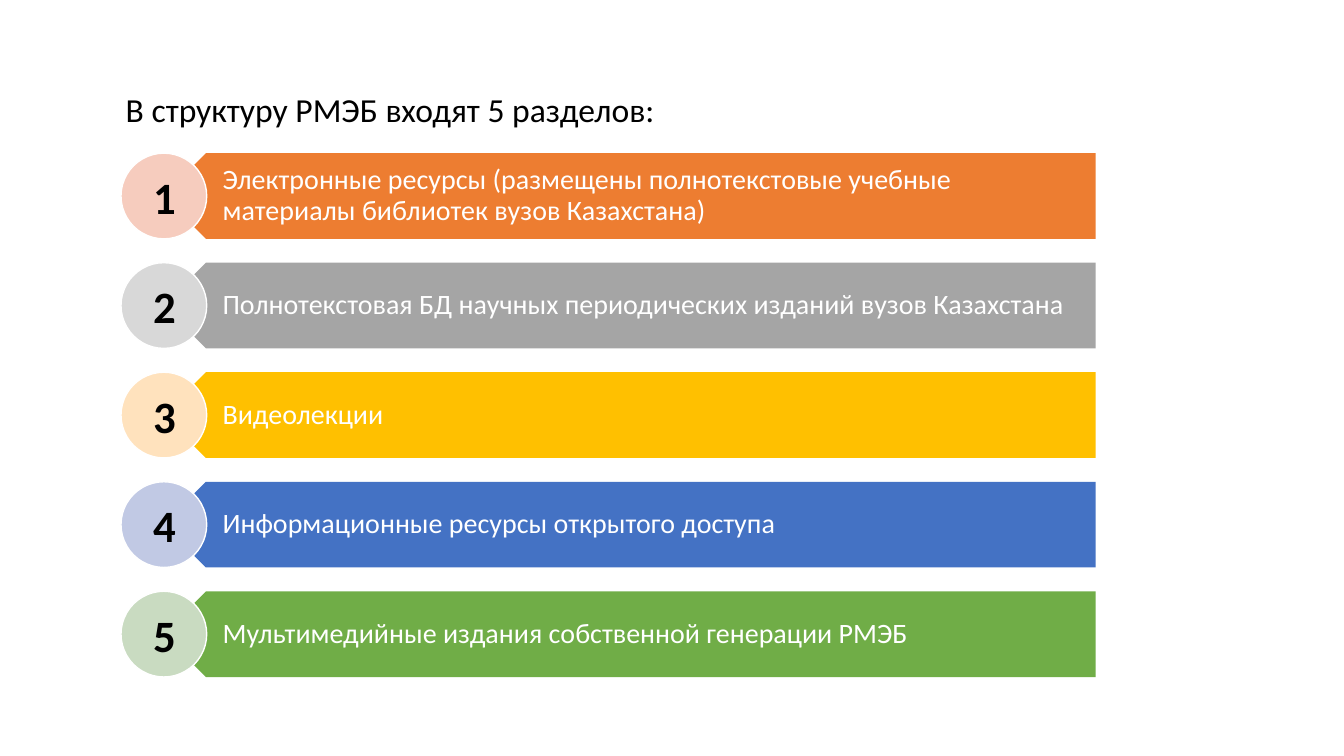
"""Build the slide listing the five sections of the RMEB library."""
import pptx
import pptx.dml.color
import pptx.enum.shapes
import pptx.enum.text
import pptx.util

Cm = pptx.util.Cm
Pt = pptx.util.Pt
Shape = pptx.enum.shapes.MSO_SHAPE
Align = pptx.enum.text.PP_ALIGN


def color(hex_value):
    return pptx.dml.color.RGBColor.from_string(hex_value)


def add_text(left, top, width, height, text, size, font_color):
    box = slide.shapes.add_textbox(Cm(left), Cm(top), Cm(width), Cm(height))
    box.text_frame.word_wrap = True
    paragraph = box.text_frame.paragraphs[0]
    paragraph.text = text
    font = paragraph.runs[0].font
    font.name = "Calibri"
    font.size = Pt(size)
    font.color.rgb = color(font_color)
    return box.text_frame, paragraph


presentation = pptx.Presentation()
presentation.slide_width = Cm(33.87)
presentation.slide_height = Cm(19.05)
slide = presentation.slides.add_slide(presentation.slide_layouts[6])

title_frame, title = add_text(
    2.92, 2.11, 26.44, 1.27, "В структуру РМЭБ входят 5 разделов:", 24, "000000")
title.space_after = Pt(18)

sections = [
    ("Электронные ресурсы (размещены полнотекстовые учебные материалы библиотек вузов Казахстана)",
     "ED7D31", "F6CCBE"),
    ("Полнотекстовая БД научных периодических изданий вузов Казахстана", "A5A5A5", "D8D8D8"),
    ("Видеолекции", "FFC000", "FFE2BD"),
    ("Информационные ресурсы открытого доступа", "4472C4", "C1C9E4"),
    ("Мультимедийные издания собственной генерации РМЭБ", "70AD47", "C9DBC1"),
]
first_top = 3.86
row_step = 2.76
row_height = 2.16

for index, (label, banner_color, circle_color) in enumerate(sections):
    top = first_top + index * row_step

    banner = slide.shapes.add_shape(
        Shape.PENTAGON, Cm(4.11), Cm(top), Cm(23.5), Cm(row_height))
    banner.rotation = 180
    banner.shadow.inherit = False
    banner.fill.solid()
    banner.fill.fore_color.rgb = color(banner_color)
    banner.line.fill.background()

    label_frame, label_paragraph = add_text(
        4.67, top, 22.96, row_height, label, 20, "FFFFFF")
    label_frame.vertical_anchor = pptx.enum.text.MSO_ANCHOR.MIDDLE
    label_frame.margin_left = Cm(0.94)
    label_frame.margin_right = Cm(0.4)
    label_frame.margin_top = label_frame.margin_bottom = Cm(0.2)
    label_paragraph.line_spacing = 0.9

    circle = slide.shapes.add_shape(
        Shape.OVAL, Cm(3.05), Cm(top), Cm(row_height), Cm(row_height))
    circle.shadow.inherit = False
    circle.fill.solid()
    circle.fill.fore_color.rgb = color(circle_color)
    circle.line.color.rgb = color("FFFFFF")
    circle.line.width = Pt(1)

    number_frame, number = add_text(
        3.42, top + 0.28, 1.45, 1.63, str(index + 1), 32, "000000")
    number.alignment = Align.CENTER
    number.runs[0].font.bold = True

presentation.save("out.pptx")
